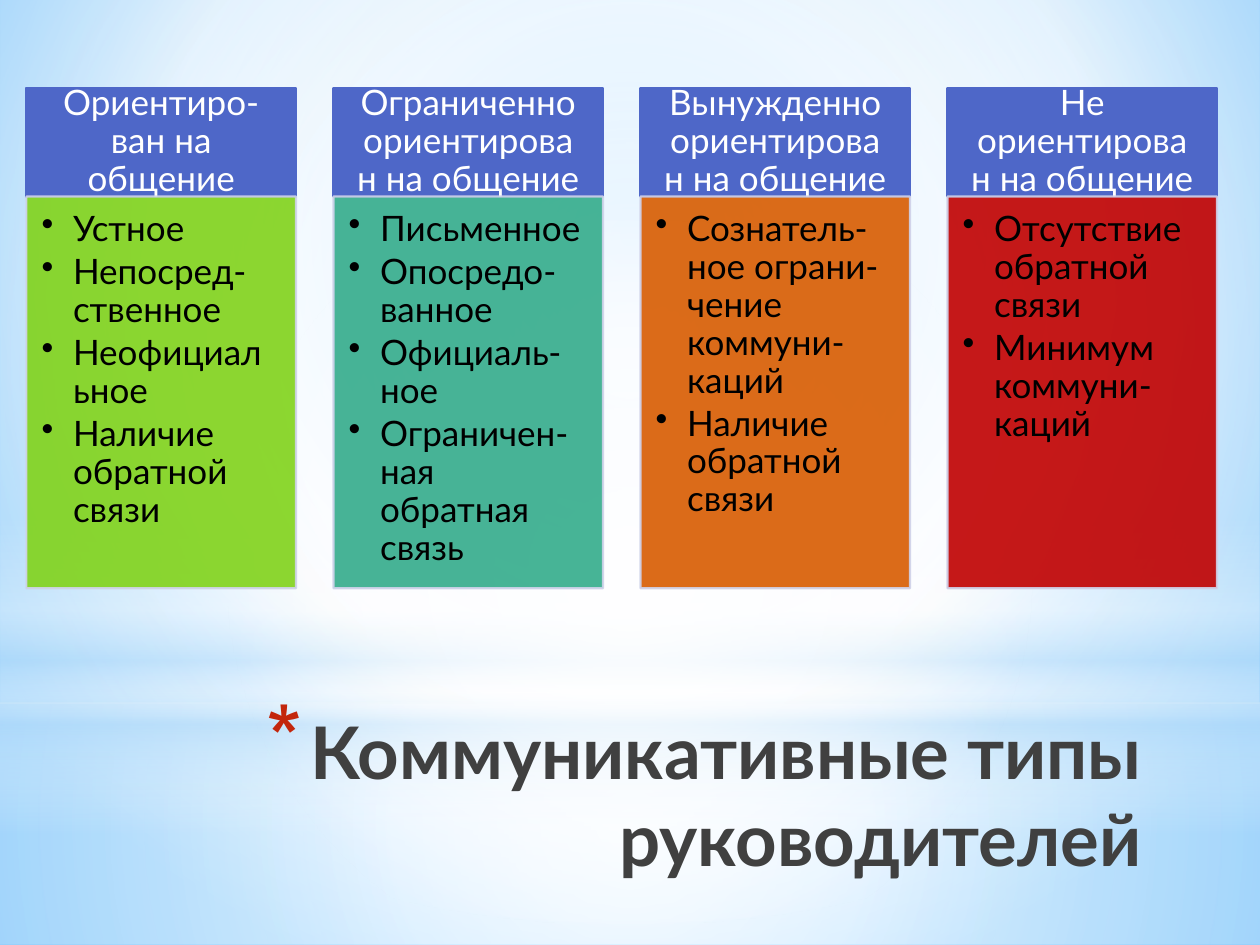
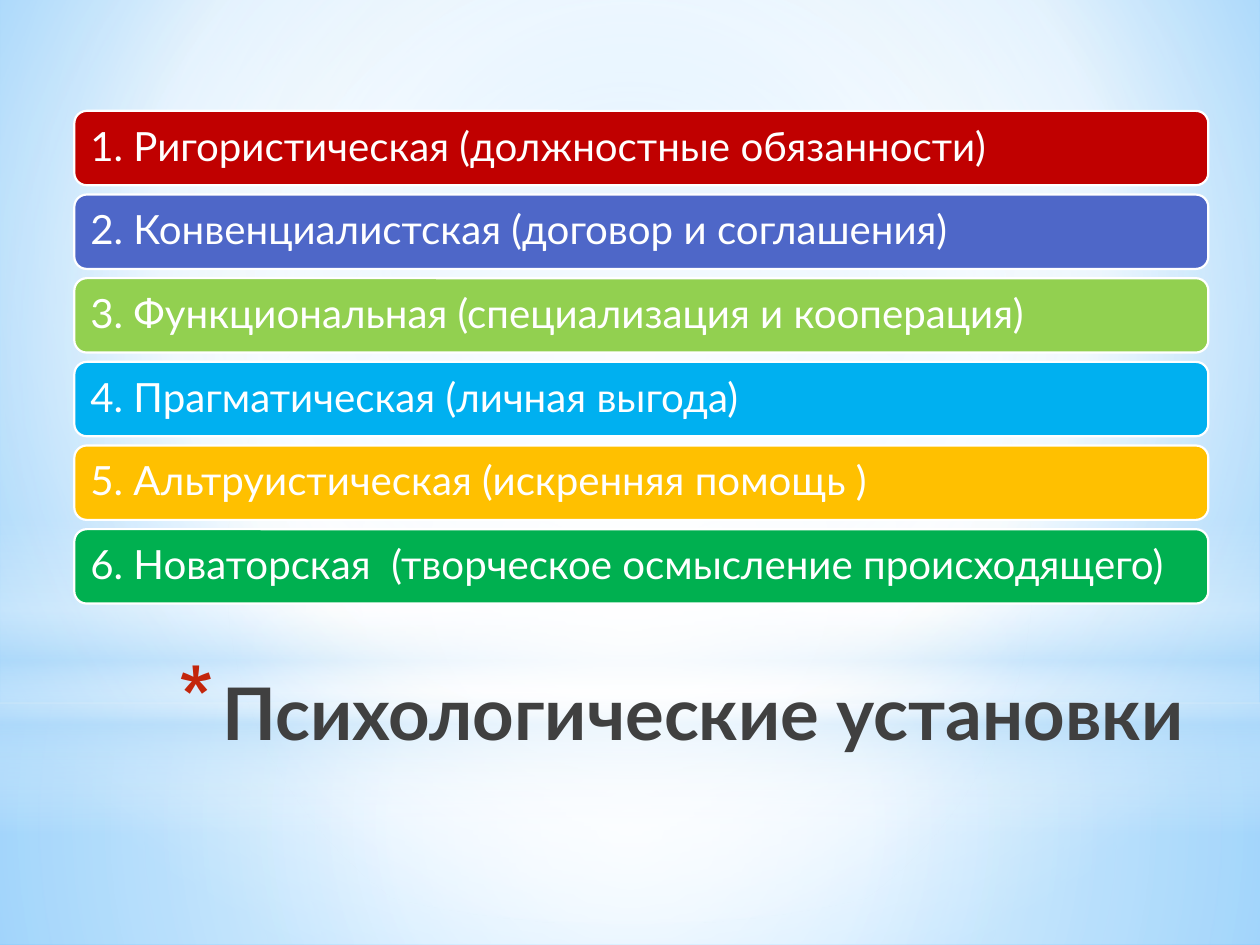
from pptx import Presentation
from pptx import util as u
from pptx.dml.color import RGBColor
from pptx.enum import shapes, text
from pptx.oxml import parse_xml
from pptx.oxml.ns import nsdecls, qn

TYPES = [
    ("Ориентиро-ван на общение", "81D31A",
     ["Устное", "Непосред-ственное", "Неофициальное", "Наличие обратной связи"]),
    ("Ограниченно ориентирован на общение", "34AC8B",
     ["Письменное", "Опосредо-ванное", "Официаль-ное",
      "Ограничен-ная обратная связь"]),
    ("Вынужденно ориентирован на общение", "D85C00",
     ["Сознатель-ное ограни-чение коммуни-каций", "Наличие обратной связи"]),
    ("Не ориентирован на общение", "C00000",
     ["Отсутствие обратной связи", "Минимум коммуни-каций"]),
]
VIEWS = [
    ("1. Ригористическая (должностные обязанности)", "C00000"),
    ("2. Конвенциалистская (договор и соглашения)", "4E67C8"),
    ("3. Функциональная (специализация и кооперация)", "92D050"),
    ("4. Прагматическая (личная выгода)", "00B0F0"),
    ("5. Альтруистическая (искренняя помощь )", "FFC000"),
    ("6. Новаторская  (творческое осмысление происходящего)", "00B050"),
]
TITLES = {
    "types": ("Коммуникативные типы руководителей", (2.01, 5.56, 7.15, 1.57)),
    "views": ("Психологические установки", (0.75, 5.25, 8.74, 1.25)),
}

THEME = {
    "font": "Lato", "title": 41.4, "card": 20, "bar": 23, "rule": 1.25,
    "ink": "404040", "star": "C3260C", "head": "4E67C8", "edge": "D0D3EB",
    "white": "FFFFFF", "black": "000000", "haze": "B4DCFA",
}
WIDE, HIGH = 10, 7.5
CARD = {"left": 0.21, "top": 0.7, "right": 9.66, "wide": 2.14, "head": 0.86, "body": 3.11}
BAR = {"left": 0.59, "top": 0.88, "end": 4.79, "wide": 9, "high": 0.59}

W, H = THEME["white"], THEME["haze"]
MID = (50, 50, 50, 50)
# Gradient stops: position, colour, opacity; then the focus, or None for top to bottom
SKY = ([(0, "9ED5FF", 100), (60, W, 100), (100, "5BB9FF", 100)], (20, 10, 20, 60))
BANDS = [
    ("RECTANGLE", 5.58, 1.92, [(0, W, 91), (37, W, 76), (100, H, 79)], MID),
    ("RECTANGLE", 0, 5.58, [(0, W, 89), (48, W, 62), (100, H, 79)], MID),
    ("RECTANGLE", 4.12, 2.5, [(0, W, 0), (29, W, 30), (45, H, 40), (55, W, 26),
                              (65, H, 60), (100, W, 0)], None),
    ("OVAL", 1.75, 5.58, [(0, W, 100), (56, W, 0)], MID),
]


def paint(node, stops, focus):
    """Swap the first empty fill under node for a gradient."""
    marks = "".join(
        f'<a:gs pos="{pos * 1000}"><a:srgbClr val="{hue}">'
        f'<a:alpha val="{alpha * 1000}"/></a:srgbClr></a:gs>'
        for pos, hue, alpha in stops)
    if focus:
        sides = " ".join(f'{k}="{v * 1000}"' for k, v in zip("ltrb", focus))
        way = f'<a:path path="circle"><a:fillToRect {sides}/></a:path>'
    else:
        way = '<a:lin ang="5400000" scaled="0"/>'
    empty = node.find(".//" + qn("a:noFill"))
    empty.getparent().replace(empty, parse_xml(
        f'<a:gradFill {nsdecls("a")} rotWithShape="1">'
        f'<a:gsLst>{marks}</a:gsLst>{way}</a:gradFill>'))


def draw(slide, kind, box, fill=None, line=None, alpha=100):
    shape = slide.shapes.add_shape(
        getattr(shapes.MSO_SHAPE, kind), *map(u.Inches, box))
    shape.shadow.inherit = False
    for part, hue in ((shape.fill, fill), (shape.line.fill, line)):
        if hue:
            part.solid()
            part.fore_color.rgb = RGBColor.from_string(hue)
        else:
            part.background()
    if line:
        shape.line.width = u.Pt(THEME["rule"])
    if alpha < 100:
        for tint in shape.element.iter(qn("a:srgbClr")):
            tint.append(parse_xml(f'<a:alpha {nsdecls("a")} val="{alpha * 1000}"/>'))
    return shape


def mark(para, char, indent, hue=THEME["black"], scale=100):
    """Give a paragraph a hanging bullet."""
    props = para._p.get_or_add_pPr()
    props.set("marL", str(u.Inches(indent)))
    props.set("indent", str(-u.Inches(indent)))
    space = nsdecls("a")
    for part in (f'<a:buClr {space}><a:srgbClr val="{hue}"/></a:buClr>',
                 f'<a:buSzPct {space} val="{scale * 1000}"/>',
                 f'<a:buChar {space} char="{char}"/>'):
        props.append(parse_xml(part))


def write(shape, lines, size, hue, inset, align="LEFT", anchor="TOP",
          bold=False, bullet=None, ratio=None, after=0):
    frame = shape.text_frame
    sides = zip(("left", "top", "right", "bottom"), inset)
    form = {f"margin_{side}": u.Inches(v) for side, v in sides}
    form.update(word_wrap=True, vertical_anchor=getattr(text.MSO_ANCHOR, anchor))
    for key, val in form.items():
        setattr(frame, key, val)
    for i, line in enumerate(lines):
        para = frame.add_paragraph() if i else frame.paragraphs[0]
        para.alignment = getattr(text.PP_ALIGN, align)
        para.line_spacing, para.space_after = ratio, u.Pt(after * size)
        if bullet:
            mark(para, *bullet)
        run = para.add_run()
        run.text = line
        for key, val in {"name": THEME["font"], "size": u.Pt(size), "bold": bold}.items():
            setattr(run.font, key, val)
        run.font.color.rgb = RGBColor.from_string(hue)


def title(slide, words, box):
    write(slide.shapes.add_textbox(*map(u.Inches, box)), [words], THEME["title"],
          THEME["ink"], (0.1, 0.05, 0.1, 0.05), "RIGHT", bold=True,
          bullet=("*", 0.35, THEME["star"], 128))


def dress(layout, slide):
    """Move the sky and its bands of light onto the shared layout."""
    for hold in list(layout.placeholders):
        hold.element.getparent().remove(hold.element)
    layout.background.fill.background()
    paint(layout.element, *SKY)
    for kind, top, high, stops, focus in BANDS:
        band = draw(slide, kind, (0, top, WIDE, high))
        paint(band.element, stops, focus)
        layout.shapes.element.append(band.element)


def cards(slide):
    top, wide = CARD["top"], CARD["wide"]
    step = (CARD["right"] - wide - CARD["left"]) / (len(TYPES) - 1)
    for i, (head, hue, items) in enumerate(TYPES):
        left = CARD["left"] + i * step
        cap = draw(slide, "RECTANGLE", (left, top, wide, CARD["head"]),
                   THEME["head"], THEME["head"])
        write(cap, [head], THEME["card"], THEME["white"], (0.16, 0.09, 0.16, 0.09),
              "CENTER", "MIDDLE", ratio=0.9)
        body = draw(slide, "RECTANGLE", (left, top + CARD["head"], wide, CARD["body"]),
                    hue, THEME["edge"], 90)
        write(body, items, THEME["card"], THEME["black"], (0.12, 0.12, 0.16, 0.17),
              bullet=("•", 0.25), ratio=0.9, after=0.15)


def bars(slide):
    step = (BAR["end"] - BAR["high"] - BAR["top"]) / (len(VIEWS) - 1)
    for i, (words, hue) in enumerate(VIEWS):
        box = (BAR["left"], BAR["top"] + i * step, BAR["wide"], BAR["high"])
        write(draw(slide, "ROUNDED_RECTANGLE", box, hue, THEME["white"]), [words],
              THEME["bar"], THEME["white"], (0.1,) * 4, anchor="MIDDLE", ratio=0.9)


def main():
    deck = Presentation()
    deck.slide_width, deck.slide_height = u.Inches(WIDE), u.Inches(HIGH)
    blank = deck.slide_layouts[6]
    first, second = (deck.slides.add_slide(blank) for _ in range(2))
    dress(blank, first)
    title(first, *TITLES["types"])
    cards(first)
    title(second, *TITLES["views"])
    bars(second)
    deck.save("out.pptx")


if __name__ == "__main__":
    main()
